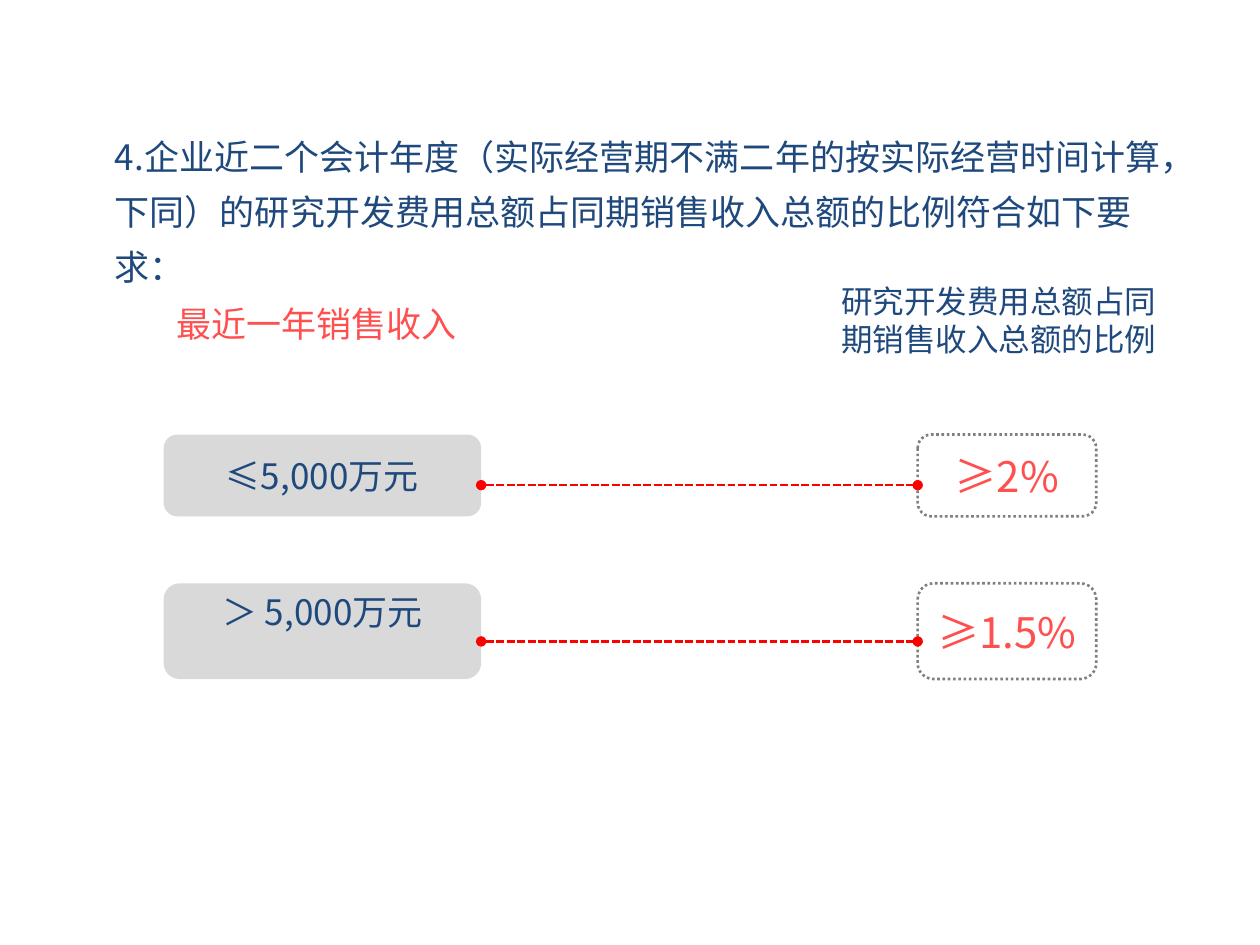
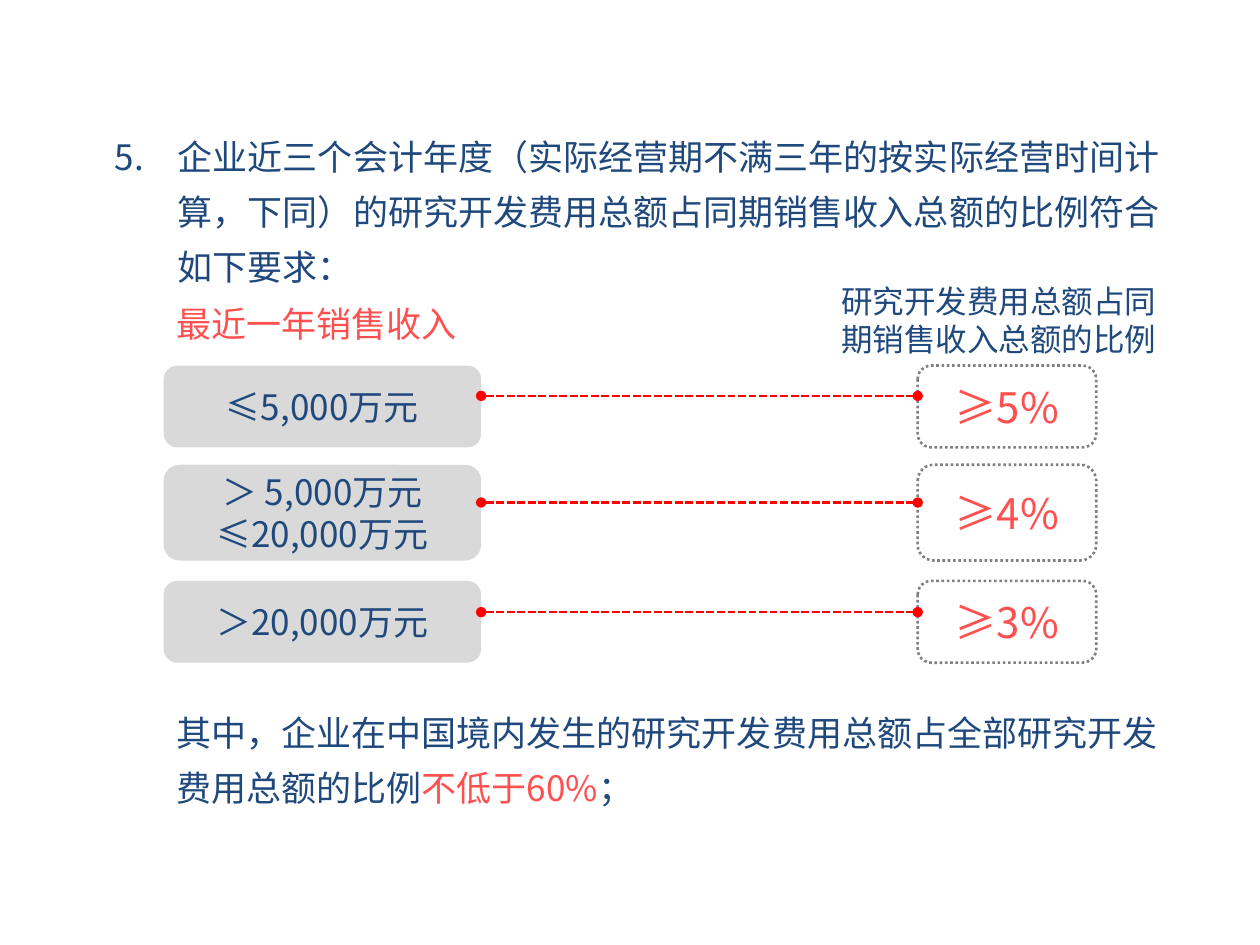
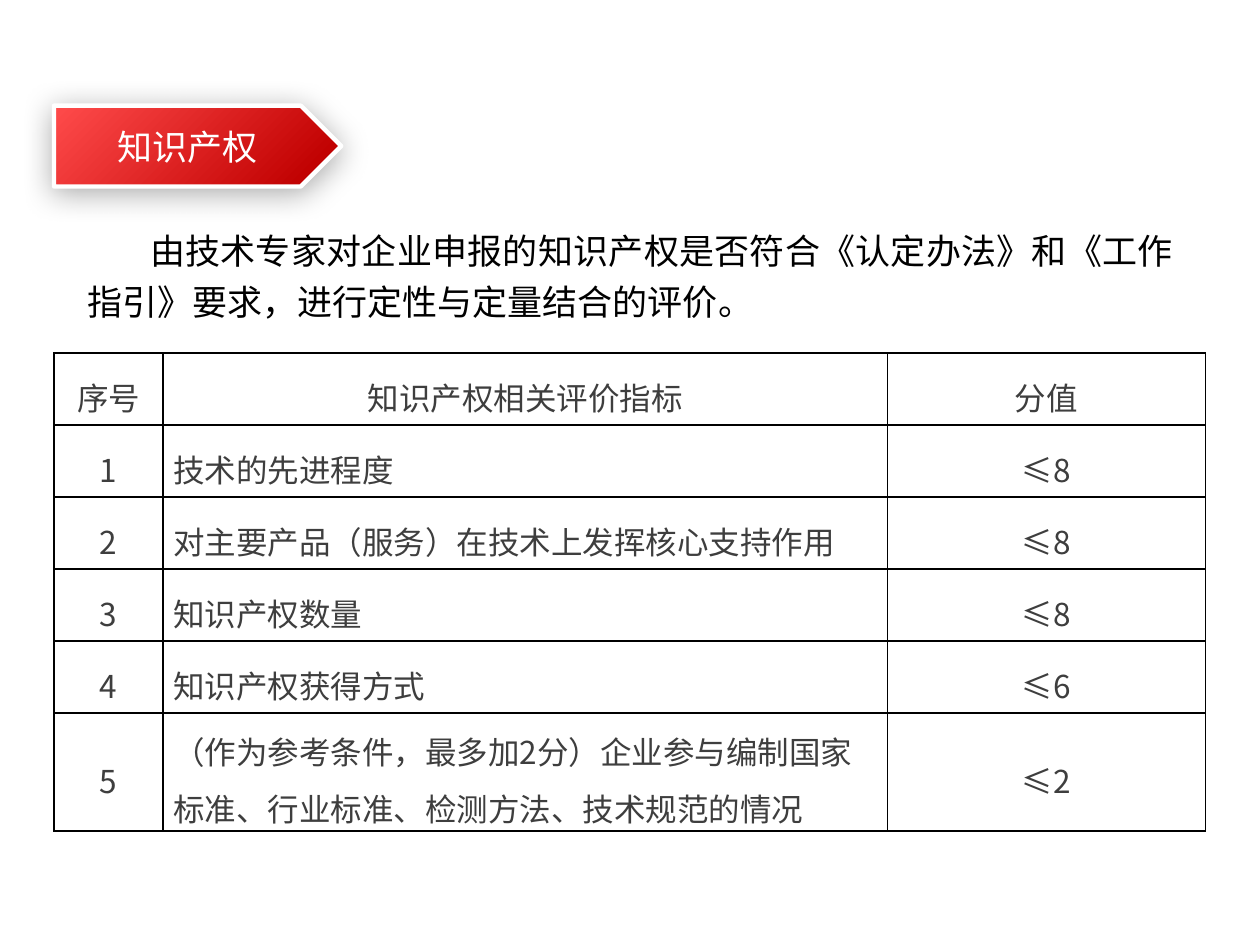
from lxml import etree
from pptx import Presentation
from pptx.dml.color import RGBColor
from pptx.enum import dml, shapes, text
from pptx.oxml import ns
from pptx.util import Cm, Pt

FONT = "Noto Sans CJK SC"
COLORS = {
    "navy": "1F497D", "coral": "FF5050", "red": "FF0000", "grey": "D9D9D9",
    "dots": "808080", "black": "000000", "white": "FFFFFF", "cell": "3E3E3E",
    "flag_light": "FF4B4B", "flag_dark": "C00000",
}
LEFT, CENTER, JUSTIFY = text.PP_ALIGN.LEFT, text.PP_ALIGN.CENTER, text.PP_ALIGN.JUSTIFY
TOP, MIDDLE = text.MSO_ANCHOR.TOP, text.MSO_ANCHOR.MIDDLE

# Shared columns of the threshold slides: left and width in cm
INCOME_COL = (3.3, 6.4)
RATIO_COL = (18.5, 3.6)


def rgb(name):
    return RGBColor.from_string(COLORS[name])


def add_xml(parent, tag, **attrs):
    return etree.SubElement(parent, ns.qn(tag), {k: str(v) for k, v in attrs.items()})


def write(tf, content, size=20, color="navy", align=LEFT, anchor=TOP, spacing=None,
          after=0, indent=None, number=None, wrap=True):
    """Fill a frame; content is a list of paragraphs, each text or (text, colour) runs."""
    tf.auto_size = text.MSO_AUTO_SIZE.NONE
    tf.word_wrap = wrap
    tf.vertical_anchor = anchor
    for i, runs in enumerate([content] if isinstance(content, str) else content):
        p = tf.paragraphs[0] if i == 0 else tf.add_paragraph()
        pPr = p._p.get_or_add_pPr()
        if indent:
            pPr.set("marL", str(Cm(indent[0])))
            pPr.set("indent", str(Cm(indent[1])))
        if number:
            add_xml(pPr, "a:buFont", typeface="+mj-lt")
            add_xml(pPr, "a:buAutoNum", type="arabicPeriod", startAt=number)
        else:
            add_xml(pPr, "a:buNone")
        p.alignment = align
        p.space_before = Pt(0)
        p.space_after = Pt(after)
        if spacing:
            p.line_spacing = spacing
        for words, run_color in [(runs, color)] if isinstance(runs, str) else runs:
            r = p.add_run()
            r.text = words
            r.font.size = Pt(size)
            r.font.name = FONT
            r.font.color.rgb = rgb(run_color)
            add_xml(r._r.get_or_add_rPr(), "a:ea", typeface=FONT)


def place(sp, box):
    sp.left, sp.top, sp.width, sp.height = map(Cm, box)


def add_text(slide, box, content, **fmt):
    sp = slide.shapes.add_textbox(*map(Cm, box))
    write(sp.text_frame, content, **fmt)


def fill_placeholder(sp, box, content, **fmt):
    place(sp, box)
    write(sp.text_frame, content, **fmt)


def add_box(slide, box, content, fill=None, **fmt):
    sp = slide.shapes.add_shape(shapes.MSO_SHAPE.ROUNDED_RECTANGLE, *map(Cm, box))
    sp.shadow.inherit = False
    if fill:
        sp.fill.solid()
        sp.fill.fore_color.rgb = rgb(fill)
        sp.line.fill.background()
    else:
        sp.fill.background()
        sp.line.color.rgb = rgb("dots")
        sp.line.width = Pt(1.5)
        sp.line.dash_style = dml.MSO_LINE.ROUND_DOT
    write(sp.text_frame, content, align=CENTER, **fmt)
    return sp


def add_link(slide, x1, x2, y):
    cxn = slide.shapes.add_connector(shapes.MSO_CONNECTOR.STRAIGHT,
                                     Cm(x1), Cm(y), Cm(x2), Cm(y))
    cxn.line.color.rgb = rgb("red")
    cxn.line.width = Pt(1.5)
    cxn.line.dash_style = dml.MSO_LINE.SQUARE_DOT
    ln = cxn.line._get_or_add_ln()
    ln.find(ns.qn("a:prstDash")).set("val", "sysDash")
    add_xml(ln, "a:headEnd", type="oval")
    add_xml(ln, "a:tailEnd", type="oval")
    add_xml(cxn._element.spPr, "a:effectLst")


def add_threshold(slide, top, height, link_y, income, ratio, anchor=MIDDLE):
    """One row: income band, dashed link, required ratio."""
    add_box(slide, (RATIO_COL[0], top, RATIO_COL[1], height), ratio,
            size=24, color="coral", anchor=MIDDLE)
    sp = add_box(slide, (INCOME_COL[0], top, INCOME_COL[1], height), income,
                 fill="grey", anchor=anchor)
    if anchor == TOP:
        sp.text_frame.margin_top = Cm(0.06)
    add_link(slide, sum(INCOME_COL), RATIO_COL[0], link_y)


def add_threshold_slide(prs, requirement, rows, **fmt):
    slide = prs.slides.add_slide(prs.slide_layouts[1])
    title = slide.shapes.title._element
    title.getparent().remove(title)
    fill_placeholder(slide.placeholders[1], (2.06, 2.36, 21.64, 3.58), requirement,
                     spacing=1.3, after=12, **fmt)
    add_text(slide, (3.3, 5.97, 6.22, 1.12), "最近一年销售收入", color="coral", wrap=False)
    add_text(slide, (16.71, 5.56, 7.14, 1.8), "研究开发费用总额占同期销售收入总额的比例", size=18)
    for row in rows:
        add_threshold(slide, *row)
    return slide


def add_flag(slide, box):
    sp = slide.shapes.add_shape(shapes.MSO_SHAPE.PENTAGON, *map(Cm, box))
    sp.fill.gradient()
    sp.fill.gradient_angle = 315
    stops = zip(sp.fill.gradient_stops, ("flag_light", "flag_dark"), (0, 0.9))
    for stop, color, position in stops:
        stop.color.rgb = rgb(color)
        stop.position = position
    sp.line.color.rgb = rgb("white")
    sp.line.width = Pt(2.5)
    # Soft shadow
    sp.shadow.inherit = False
    effects = sp._element.spPr.find(ns.qn("a:effectLst"))
    shadow = add_xml(effects, "a:outerShdw", blurRad=Pt(17.8), dist=Pt(3),
                     dir=87 * 60000, algn="ctr", rotWithShape=0)
    clr = add_xml(shadow, "a:srgbClr", val=COLORS["black"])
    add_xml(clr, "a:alpha", val=33000)


def set_borders(cell):
    tcPr = cell._tc.get_or_add_tcPr()
    for i, side in enumerate(("a:lnL", "a:lnR", "a:lnT", "a:lnB")):
        ln = add_xml(tcPr, side, w=Pt(1))
        add_xml(add_xml(ln, "a:solidFill"), "a:srgbClr", val=COLORS["black"])
        tcPr.insert(i, ln)


def add_score_table(slide, left, top, widths, heights, rows):
    frame = slide.shapes.add_table(len(rows), len(widths), Cm(left), Cm(top),
                                   Cm(sum(widths)), Cm(sum(heights)))
    table = frame.table
    table.first_row = table.horz_banding = False
    for column, width in zip(table.columns, widths):
        column.width = Cm(width)
    for r, (row, height) in enumerate(zip(rows, heights)):
        table.rows[r].height = Cm(height)
        for c, words in enumerate(row):
            cell = table.cell(r, c)
            cell.fill.background()
            set_borders(cell)
            cell.margin_left = cell.margin_right = Cm(0.2)
            cell.margin_top, cell.margin_bottom = Cm(0.08), 0
            cell.vertical_anchor = MIDDLE
            write_cell(cell, words, LEFT if r and c == 1 else CENTER)


def write_cell(cell, words, align):
    p = cell.text_frame.paragraphs[0]
    p.alignment = align
    p.line_spacing = 1.25
    r = p.add_run()
    r.text = words
    r.font.size = Pt(18)
    r.font.name = FONT
    r.font.color.rgb = rgb("cell")
    add_xml(r._r.get_or_add_rPr(), "a:ea", typeface=FONT)


def add_ip_slide(prs):
    slide = prs.slides.add_slide(prs.slide_layouts[1])
    flag_box = (1.09, 2.13, 5.79, 1.63)
    add_flag(slide, flag_box)
    # The title sits on the flag, left of its point
    title = slide.shapes.title
    slide.shapes._spTree.append(title._element)
    fill_placeholder(title, (1.09, 2.13, 5.38, 1.63), "知识产权",
                     color="white", align=CENTER, anchor=MIDDLE)
    fill_placeholder(slide.placeholders[1], (1.5, 4.34, 22.4, 2.31),
                     "由技术专家对企业申报的知识产权是否符合《认定办法》和《工作指引》要求，进行定性与定量结合的评价。",
                     color="black", align=JUSTIFY, spacing=1.2, indent=(0, 1.27))
    criteria = [
        ("技术的先进程度", 8),
        ("对主要产品（服务）在技术上发挥核心支持作用", 8),
        ("知识产权数量", 8),
        ("知识产权获得方式", 6),
        ("（作为参考条件，最多加2分）企业参与编制国家标准、行业标准、检测方法、技术规范的情况", 2),
    ]
    rows = [("序号", "知识产权相关评价指标", "分值")]
    rows += [(str(i), name, f"≤{score}") for i, (name, score) in enumerate(criteria, 1)]
    add_score_table(slide, 1.09, 7.12, (2.2, 14.6, 6.41), [1.45] * 5 + [2.24], rows)


def main():
    prs = Presentation()
    prs.slide_width, prs.slide_height = Cm(25.4), Cm(19.05)

    # Two-year requirement
    add_threshold_slide(
        prs,
        "4.企业近二个会计年度（实际经营期不满二年的按实际经营时间计算，下同）的研究开发费用总额占同期销售收入总额的比例符合如下要求：",
        [(8.76, 1.65, 9.78, "≤5,000万元", "≥2%"),
         (11.76, 1.93, 12.93, "＞ 5,000万元", "≥1.5%", TOP)],
        indent=(0, 0))

    # Three-year requirement
    slide = add_threshold_slide(
        prs,
        "企业近三个会计年度（实际经营期不满三年的按实际经营时间计算，下同）的研究开发费用总额占同期销售收入总额的比例符合如下要求：",
        [(7.37, 1.65, 7.98, "≤5,000万元", "≥5%"),
         (9.37, 1.93, 10.13, ["＞ 5,000万元", "≤20,000万元"], "≥4%"),
         (11.71, 1.65, 12.34, "＞20,000万元", "≥3%")],
        indent=(1.27, -1.27), number=5)
    add_text(slide, (3.3, 13.97, 20.57, 2.46),
             [[("其中，企业在中国境内发生的研究开发费用总额占全部研究开发费用总额的比例", "navy"),
               ("不低于60%", "coral"), ("；", "navy")]], spacing=1.3)

    # Intellectual property scoring
    add_ip_slide(prs)
    prs.save("out.pptx")


if __name__ == "__main__":
    main()
